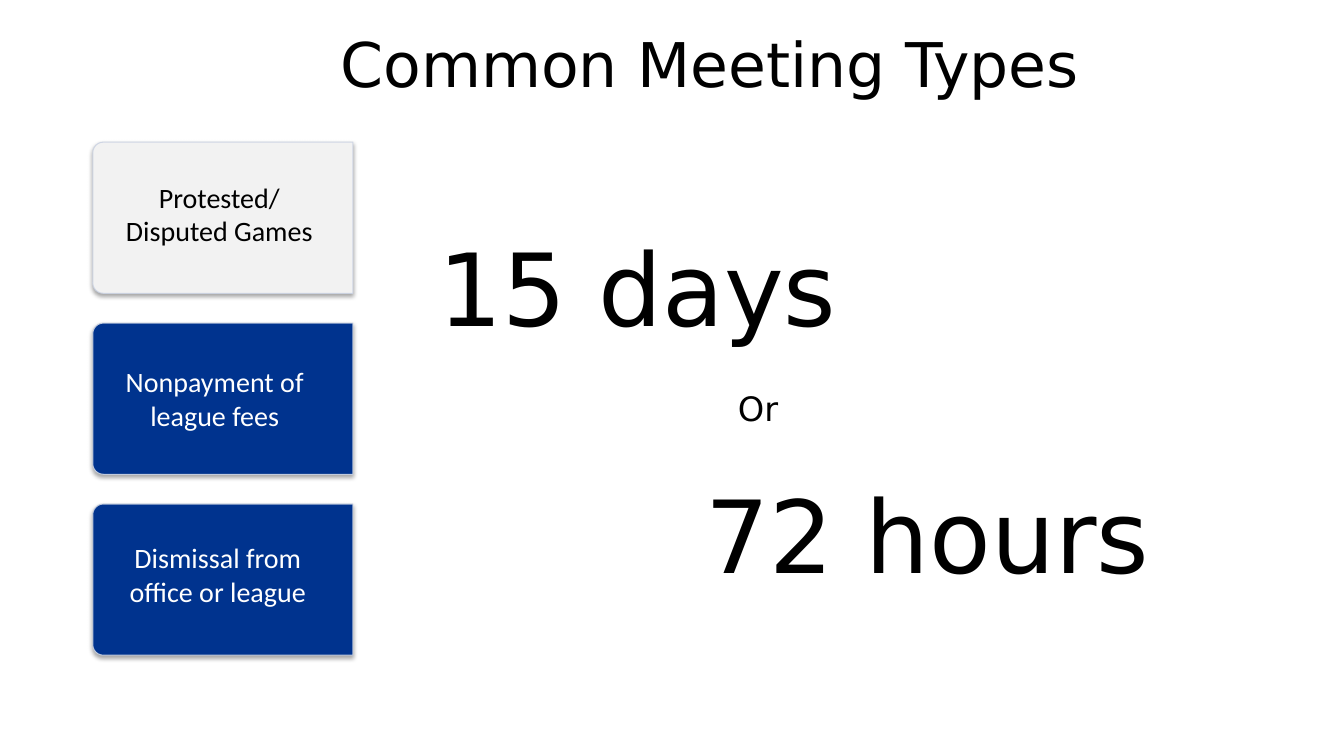
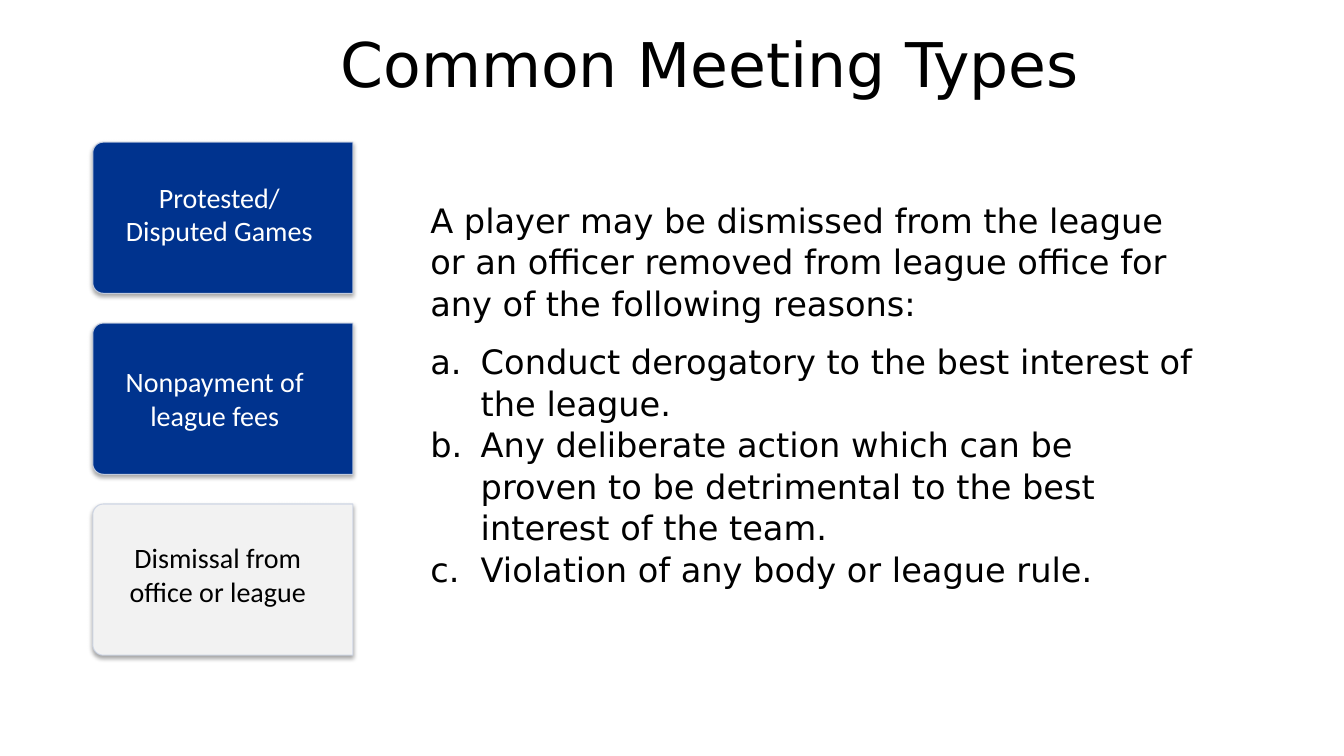
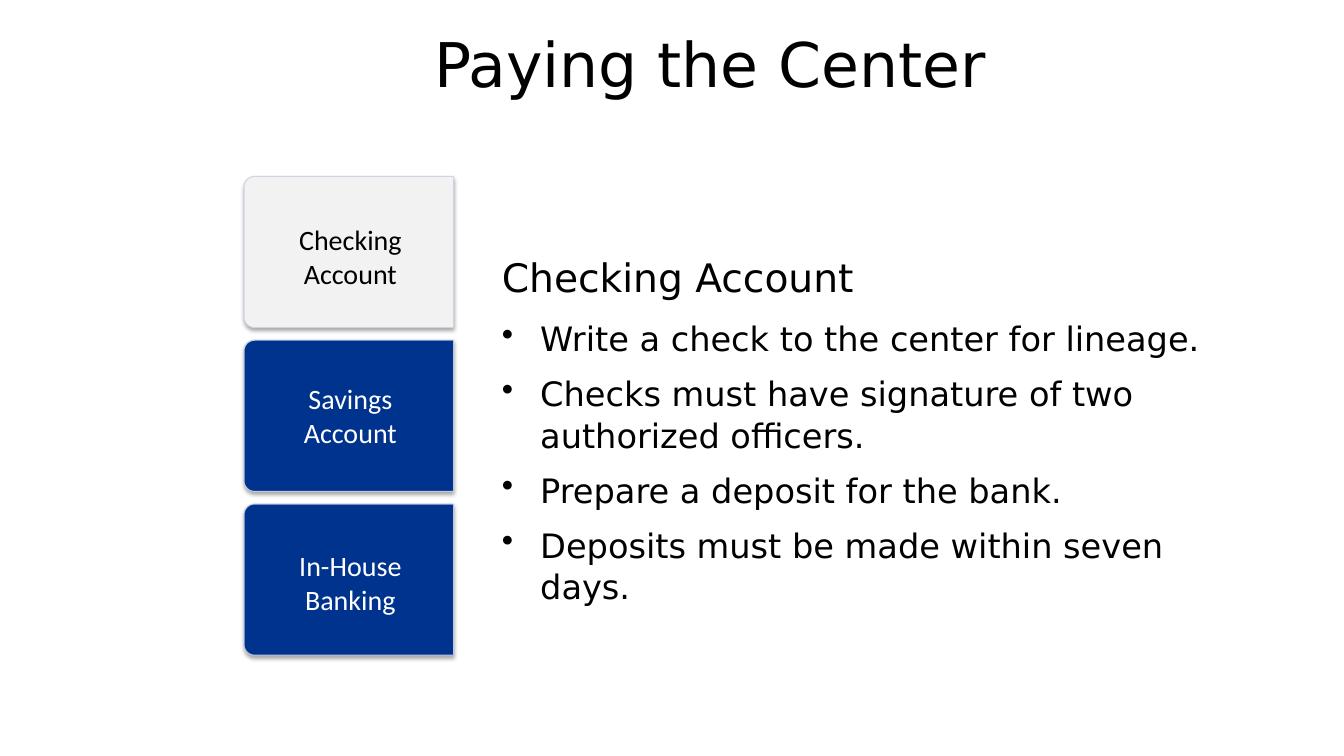
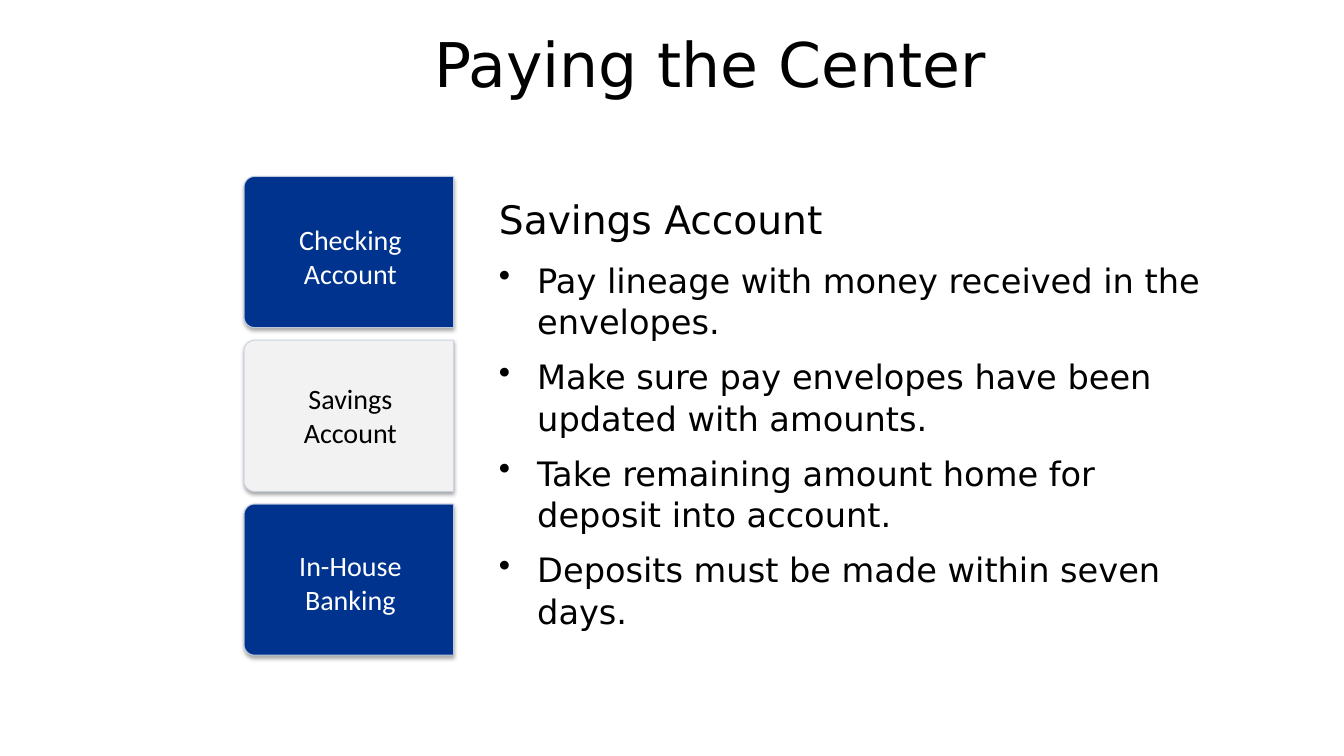
from dataclasses import dataclass
from typing import Any

import pptx
import pptx.dml.color
import pptx.enum.shapes
import pptx.enum.text
import pptx.oxml
import pptx.oxml.ns
import pptx.util
from pptx.util import Inches

# Shared look
SANS, LABEL = "DejaVu Sans", "Calibri"
BLACK, WHITE, BLUE, PALE, EDGE = "000000", "FFFFFF", "00338E", "F2F2F2", "CBD3E3"
DEEP = 1.5  # height of a card on the slide
LAST = 5.75  # centre of the lowest card
PITCH = 1.03  # line spacing of body text
LETTER = '<a:buAutoNum {} type="alphaLcPeriod"/>'
DOT = '<a:buChar {} char="•"/>'
SHADOW = ('<a:outerShdw {} blurRad="39370" dist="22860" dir="5400000" rotWithShape="0">'
          '<a:srgbClr val="000000"><a:alpha val="35000"/></a:srgbClr></a:outerShdw>')
ALPHA = '<a:alpha {} val="90000"/>'

Box = tuple[float, float, float, float]


@dataclass
class Line:
    text: str
    size: float = 24
    gap: float = 0  # points before the paragraph
    left: float = 0
    mark: str = ""
    font: str = SANS
    tint: str = BLACK
    pitch: float = PITCH
    mid: bool = False


@dataclass
class Card:
    lines: list[str]
    box: Box


@dataclass
class Stack:
    title: str
    mid: float  # centre of the column
    first: float  # centre of the top card
    wide: float
    cards: list[Card]


@dataclass
class Page:
    stack: Stack
    live: int  # index of the pale card
    box: Box
    lines: list[Line]


def color(code: str) -> pptx.dml.color.RGBColor:
    return pptx.dml.color.RGBColor.from_string(code)


def node(xml: str) -> Any:
    return pptx.oxml.parse_xml(xml.format(pptx.oxml.ns.nsdecls("a")))


def apply(target: Any, form: dict[str, Any]) -> None:
    for name, value in form.items():
        setattr(target, name, value)


def write(slide: Any, box: Box, lines: list[Line], center: bool = False) -> None:
    """Add a wrapped text box with one paragraph per line."""
    frame = slide.shapes.add_textbox(*map(Inches, box)).text_frame
    anchor = pptx.enum.text.MSO_ANCHOR
    apply(frame, {"word_wrap": True,
                  "vertical_anchor": anchor.MIDDLE if center else anchor.TOP})
    for i, line in enumerate(lines):
        para = frame.add_paragraph() if i else frame.paragraphs[0]
        form = {"line_spacing": line.pitch}
        if line.gap:
            form["space_before"] = pptx.util.Pt(line.gap)
        if line.mid:
            form["alignment"] = pptx.enum.text.PP_ALIGN.CENTER
        apply(para, form)
        if line.left:
            props = para._p.get_or_add_pPr()
            props.set("marL", str(Inches(line.left)))
            if line.mark:
                props.set("indent", str(-Inches(line.left)))
                props.append(node(line.mark))
        run = para.add_run()
        run.text = line.text
        apply(run.font, {"name": line.font, "size": pptx.util.Pt(line.size)})
        run.font.color.rgb = color(line.tint)


def panel(slide: Any, x: float, y: float, wide: float, fill: str) -> None:
    """Add a card centred at x, y with its rounded side on the left."""
    kind = pptx.enum.shapes.MSO_SHAPE.ROUND_2_SAME_RECTANGLE
    place = (x - DEEP / 2, y - wide / 2, DEEP, wide)
    shape = slide.shapes.add_shape(kind, *map(Inches, place))
    shape.rotation = 270
    shape.adjustments[0], shape.adjustments[1] = 0.07, 0
    shape.fill.solid()
    shape.fill.fore_color.rgb = color(fill)
    shape.line.width = pptx.util.Pt(0.75)
    shape.line.color.rgb = color(EDGE)
    shape.line._ln.find(".//" + pptx.oxml.ns.qn("a:srgbClr")).append(node(ALPHA))
    shape.shadow.inherit = False
    shape._element.spPr.find(pptx.oxml.ns.qn("a:effectLst")).append(node(SHADOW))


def build(deck: Any, page: Page) -> None:
    slide = deck.slides.add_slide(deck.slide_layouts[6])
    stack = page.stack
    write(slide, (2.42, 0, 9.25, 1.25),
          [Line(stack.title, 44, pitch=1, mid=True)], center=True)
    # Cards below, labels on top
    step = (LAST - stack.first) / (len(stack.cards) - 1)
    for i in range(len(stack.cards)):
        fill = PALE if i == page.live else BLUE
        panel(slide, stack.mid, stack.first + i * step, stack.wide, fill)
    for i, card in enumerate(stack.cards):
        tint = BLACK if i == page.live else WHITE
        write(slide, card.box, [Line(text, 20, font=LABEL, tint=tint, pitch=1, mid=True)
                                for text in card.lines], center=True)
    write(slide, page.box, page.lines)


def points(head: str, items: list[str]) -> list[Line]:
    """A heading with bullets under it."""
    return [Line(head, 28)] + [Line(text, gap=9.6 if i else 12, left=0.38, mark=DOT)
                               for i, text in enumerate(items)]


# Content
MEET = Stack("Common Meeting Types", 2.21, 2.16, 2.58, [
    Card(["Protested/", "Disputed Games"], (1.1, 1.58, 2.15, 1.08)),
    Card(["Nonpayment of league fees"], (1.1, 3.41, 2.06, 1.08)),
    Card(["Dismissal from office or league"], (1.17, 5.17, 1.98, 1.05)),
])
PAY = Stack("Paying the Center", 3.46, 2.5, 2.08, [
    Card(["Checking Account"], (2.6, 2, 1.75, 1.08)),
    Card(["Savings Account"], (2.6, 3.58, 1.75, 1.08)),
    Card(["In-House Banking"], (2.6, 5.25, 1.75, 1.05)),
])
PAGES = [
    Page(MEET, 0, (4.25, 2.15, 8, 4.43), [
        Line("15 days", 72),
        Line("Or", gap=29, left=2.97),
        Line("72 hours", 72, gap=29, left=2.65),
    ]),
    Page(MEET, 2, (4.17, 1.92, 7.83, 4.83), [
        Line("A player may be dismissed from the league or an officer removed "
             "from league office for any of the following reasons:"),
        Line("Conduct derogatory to the best interest of the league.",
             gap=12, left=0.5, mark=LETTER),
        Line("Any deliberate action which can be proven to be detrimental "
             "to the best interest of the team.", left=0.5, mark=LETTER),
        Line("Violation of any body or league rule.", left=0.5, mark=LETTER),
    ]),
    Page(PAY, 0, (4.88, 2.45, 7.73, 4.83), points("Checking Account", [
        "Write a check to the center for lineage.",
        "Checks must have signature of two authorized officers.",
        "Prepare a deposit for the bank.",
        "Deposits must be made within seven days.",
    ])),
    Page(PAY, 1, (4.85, 1.87, 7.32, 4.83), points("Savings Account", [
        "Pay lineage with money received in the envelopes.",
        "Make sure pay envelopes have been updated with amounts.",
        "Take remaining amount home for deposit into account.",
        "Deposits must be made within seven days.",
    ])),
]


def main() -> None:
    deck = pptx.Presentation()
    apply(deck, {"slide_width": Inches(13.33), "slide_height": Inches(7.5)})
    for page in PAGES:
        build(deck, page)
    deck.save("out.pptx")


if __name__ == "__main__":
    main()
